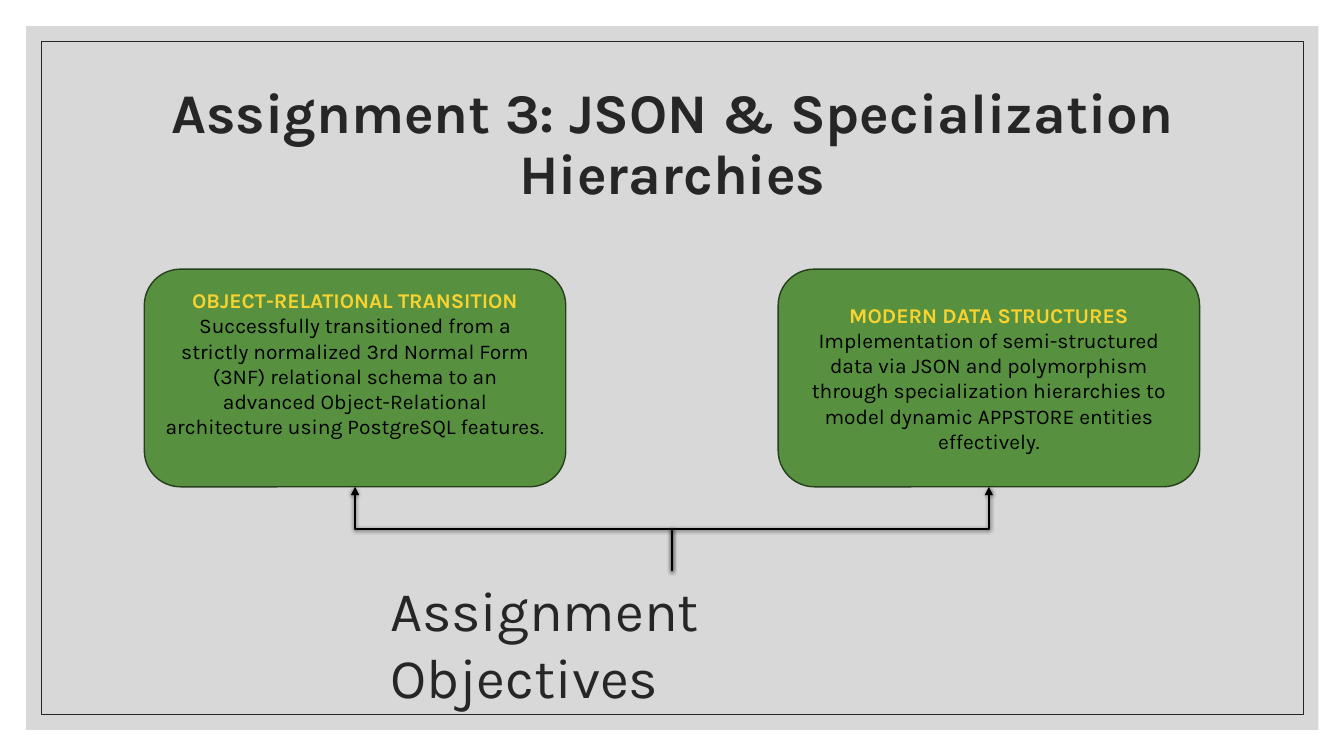
from lxml import etree
from pptx import Presentation
from pptx import util as u
from pptx.dml.color import RGBColor
from pptx.enum import shapes, text
from pptx.oxml import ns

INK = RGBColor(0x26, 0x26, 0x26)
BLACK = RGBColor(0x00, 0x00, 0x00)
PANEL = RGBColor(0xBF, 0xBF, 0xBF)
GREEN = RGBColor(0x57, 0x90, 0x3F)
DARK_GREEN = RGBColor(0x26, 0x3F, 0x1C)
YELLOW = RGBColor(0xF8, 0xD2, 0x2F)

CENTRE = 50
CARD_OFFSET = 23.58
CARD_TOP, CARD_WIDTH, CARD_HEIGHT = 35.6, 31.36, 28.8
LABEL_TOP = 75.5

CARDS = [
    (-1, 0.34, "OBJECT-RELATIONAL TRANSITION",
     "Successfully transitioned from a strictly normalized 3rd Normal Form (3NF) "
     "relational schema to an advanced Object-Relational architecture using "
     "PostgreSQL features."),
    (1, 0.05, "MODERN DATA STRUCTURES",
     "Implementation of semi-structured data via JSON and polymorphism through "
     "specialization hierarchies to model dynamic APPSTORE entities effectively."),
]


def add_xml(parent, tag, **attributes):
    values = {name: str(value) for name, value in attributes.items()}
    return etree.SubElement(parent, ns.qn(tag), values)


class SlideBuilder:
    """Draws on one slide; lengths are columns and rows of a 100 by 100 grid."""

    font = "Karla"

    def __init__(self, presentation):
        self.slide = presentation.slides.add_slide(presentation.slide_layouts[6])
        self.column = presentation.slide_width / 100
        self.row = presentation.slide_height / 100

    def place(self, left, top, width, height):
        return (round(left * self.column), round(top * self.row),
                round(width * self.column), round(height * self.row))

    def box(self, kind, area, fill=None, alpha=None, line=None, line_width=1):
        shape = self.slide.shapes.add_shape(kind, *self.place(*area))
        shape.shadow.inherit = False
        if fill is None:
            shape.fill.background()
        else:
            shape.fill.solid()
            shape.fill.fore_color.rgb = fill
        if alpha is not None:
            colour = shape._element.spPr.find(".//" + ns.qn("a:srgbClr"))
            add_xml(colour, "a:alpha", val=alpha * 1000)
        if line is None:
            shape.line.fill.background()
        else:
            shape.line.color.rgb = line
            shape.line.width = u.Pt(line_width)
        return shape

    def add_words(self, paragraph, words, size, colour, bold=False,
                  align=text.PP_ALIGN.CENTER):
        paragraph.alignment = align
        run = paragraph.add_run()
        run.text = words
        run.font.name = self.font
        run.font.size = u.Pt(size)
        run.font.bold = bold
        run.font.color.rgb = colour

    def text_box(self, area):
        frame = self.slide.shapes.add_textbox(*self.place(*area)).text_frame
        frame.word_wrap = True
        return frame

    def title(self, area, words):
        frame = self.text_box(area)
        frame.vertical_anchor = text.MSO_ANCHOR.MIDDLE
        frame.paragraphs[0].line_spacing = 0.9
        self.add_words(frame.paragraphs[0], words, 40, INK, bold=True)

    def label(self, area, words):
        frame = self.text_box(area)
        frame.auto_size = text.MSO_AUTO_SIZE.SHAPE_TO_FIT_TEXT
        self.add_words(frame.paragraphs[0], words, 40, INK,
                       align=text.PP_ALIGN.LEFT)

    def card(self, area, heading, body, bottom_margin):
        shape = self.box(shapes.MSO_SHAPE.ROUNDED_RECTANGLE, area,
                         fill=GREEN, line=DARK_GREEN)
        frame = shape.text_frame
        frame.word_wrap = True
        frame.vertical_anchor = text.MSO_ANCHOR.MIDDLE
        frame.margin_bottom = u.Inches(bottom_margin)
        self.add_words(frame.paragraphs[0], heading, 15, YELLOW, bold=True)
        self.add_words(frame.add_paragraph(), body, 15, BLACK)

    def rising_arrow(self, start, end):
        """Elbow that leaves upwards: a sideways elbow turned by 270 degrees."""
        left, bottom = start[0] * self.column, start[1] * self.row
        right, top = end[0] * self.column, end[1] * self.row
        middle_x, middle_y = (left + right) / 2, (top + bottom) / 2
        half_rise, half_run = (bottom - top) / 2, (right - left) / 2
        arrow = self.slide.shapes.add_connector(
            shapes.MSO_CONNECTOR.ELBOW,
            round(middle_x - half_rise), round(middle_y - half_run),
            round(middle_x + half_rise), round(middle_y + half_run))
        arrow.line.color.rgb = BLACK
        arrow.line.width = u.Pt(1.5)
        properties = arrow._element.spPr
        properties.find(ns.qn("a:xfrm")).set("rot", str(270 * 60000))
        add_xml(properties.find(ns.qn("a:ln")), "a:tailEnd", type="triangle")
        shadow = add_xml(add_xml(properties, "a:effectLst"), "a:outerShdw",
                         blurRad=u.Pt(3), dist=u.Pt(1), dir=90 * 60000,
                         rotWithShape=0)
        colour = add_xml(shadow, "a:srgbClr", val=BLACK)
        add_xml(colour, "a:alpha", val=63000)


def main():
    presentation = Presentation()
    presentation.slide_width = u.Inches(13.33)
    presentation.slide_height = u.Inches(7.5)
    builder = SlideBuilder(presentation)

    rectangle = shapes.MSO_SHAPE.RECTANGLE
    builder.box(rectangle, (1.95, 3.47, 96.15, 93.07), fill=PANEL, alpha=60)
    builder.box(rectangle, (3.07, 5.47, 93.9, 89.07), line=INK, line_width=0.5)
    builder.title((8.78, 9.33, 82.5, 20),
                  "Assignment 3: JSON & Specialization Hierarchies")

    for side, bottom_margin, heading, body in CARDS:
        middle = CENTRE + side * CARD_OFFSET
        builder.card((middle - CARD_WIDTH / 2, CARD_TOP, CARD_WIDTH, CARD_HEIGHT),
                     heading, body, bottom_margin)
        builder.rising_arrow((CENTRE, LABEL_TOP), (middle, CARD_TOP + CARD_HEIGHT))

    builder.label((28.28, LABEL_TOP, 43.36, 10.27), "Assignment Objectives")
    presentation.save("out.pptx")


if __name__ == "__main__":
    main()
